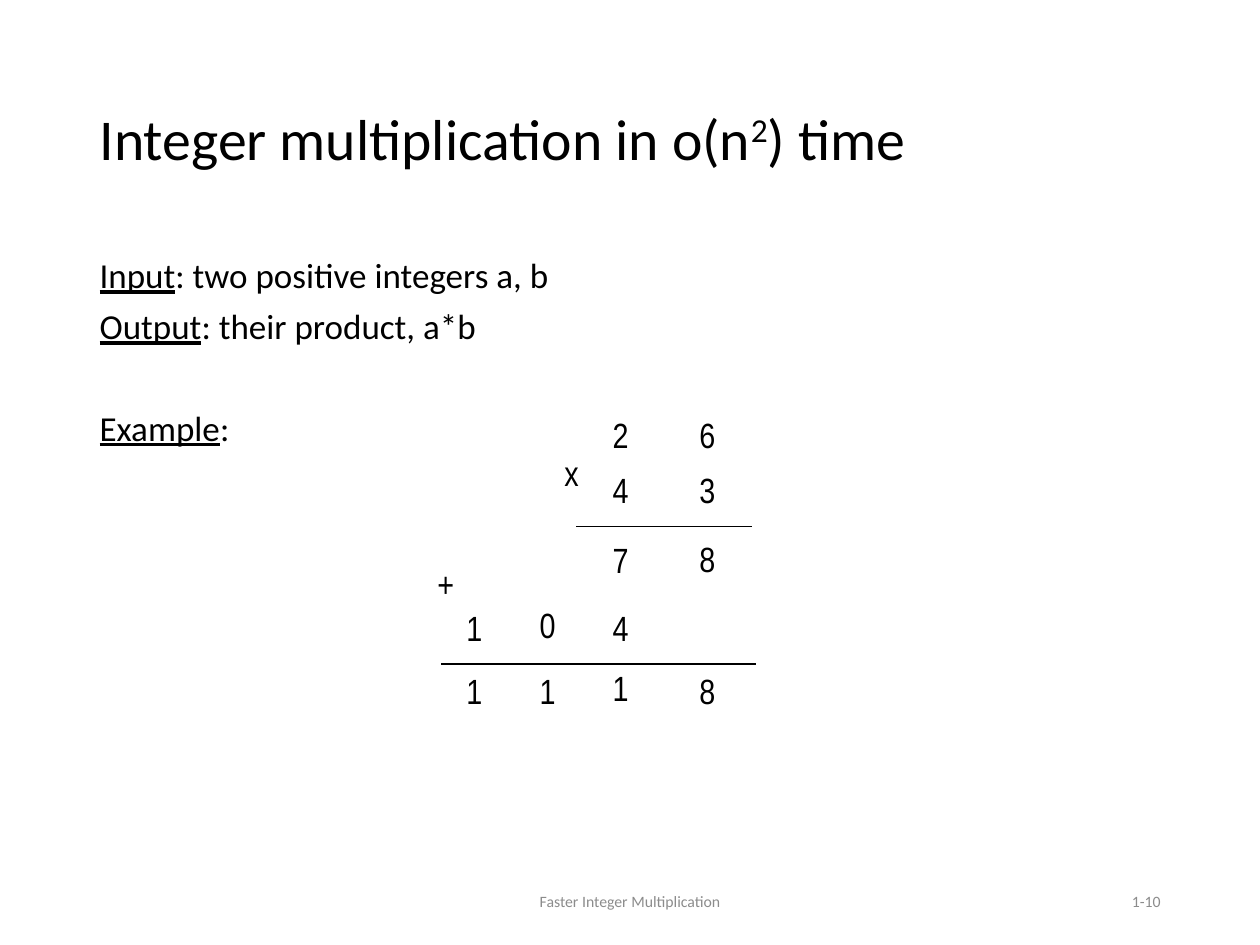
"""Build a slide that multiplies 26 by 43 in long form."""
from lxml import etree
from pptx import Presentation
from pptx.dml.color import RGBColor
from pptx.enum.shapes import MSO_CONNECTOR
from pptx.enum.text import MSO_ANCHOR, MSO_AUTO_SIZE, PP_ALIGN
from pptx.oxml.ns import qn
from pptx.util import Pt

LEFT, CENTER, RIGHT = PP_ALIGN.LEFT, PP_ALIGN.CENTER, PP_ALIGN.RIGHT
MIDDLE, NO_FIT = MSO_ANCHOR.MIDDLE, MSO_AUTO_SIZE.NONE
STRAIGHT = MSO_CONNECTOR.STRAIGHT
BLACK = RGBColor(0x00, 0x00, 0x00)
GRAY = RGBColor(0x8C, 0x8C, 0x8C)
BODY_FONT, DIGIT_FONT = "Calibri", "Arial Narrow"
PX = 914400 / 126

TITLE = [("Integer multiplication in o(n", False), ("2", True), (") time", False)]
BODY = [("Input", ": two positive integers a, b", 7.5),
        ("Output", ": their product, a*b", 7.5),
        ("Example", ":", 36.5)]
FOOTERS = [("Faster Integer Multiplication", (417, 876, 426, 50), CENTER),
           ("1-10", (890, 876, 283, 50), RIGHT)]
SIGNS = [("x", (552, 445, 53, 55)), ("+", (425, 556, 53, 55))]
COLUMNS = [431, 504, 577, 664]
CELL_W, CELL_H = 87, 51
FACTORS = ["26", "43"]
FACTORS_TOP = 417
DIGITS = [("8", 3, 541), ("7", 2, 542),
          ("4", 2, 610), ("0", 1, 607), ("1", 0, 610),
          ("8", 3, 673), ("1", 2, 670), ("1", 1, 673), ("1", 0, 673)]
SUM_LINE = (441, 664, 756, 664)


def emu(*lengths):
    return [round(n * PX) for n in lengths]


def style(p, size, name=BODY_FONT, color=BLACK, align=LEFT):
    p.alignment = align
    p.font.size = Pt(size)
    p.font.name = name
    p.font.color.rgb = color


def place(s, box):
    s.left, s.top, s.width, s.height = emu(*box)
    s.text_frame.auto_size = NO_FIT
    return s.text_frame


def add_text(slide, text, box, **look):
    tf = slide.shapes.add_textbox(*emu(*box)).text_frame
    tf.word_wrap = True
    tf.text = text
    style(tf.paragraphs[0], **look)
    return tf


def add_digits(slide, rows, left, top):
    size = (len(rows[0]) * CELL_W, len(rows) * CELL_H)
    table = slide.shapes.add_table(len(rows), len(rows[0]),
                                   *emu(left, top, *size)).table
    table.first_row = table.horz_banding = False
    for i, row in enumerate(rows):
        for j, digit in enumerate(row):
            cell = table.cell(i, j)
            cell.text = digit
            style(cell.text_frame.paragraphs[0], 20, DIGIT_FONT, align=CENTER)
            cell.fill.background()
    return table


def underline_cell(cell):
    tc_pr = cell._tc.get_or_add_tcPr()
    ln = etree.Element(qn("a:lnB"), w=str(Pt(1)))
    fill = etree.SubElement(ln, qn("a:solidFill"))
    etree.SubElement(fill, qn("a:srgbClr"), val=str(BLACK))
    tc_pr.insert(0, ln)


def add_title(slide):
    tf = place(slide.shapes.title, (87, 50, 1086, 183))
    tf.vertical_anchor = MIDDLE
    p = tf.paragraphs[0]
    style(p, 33)
    p.line_spacing = 0.9
    for text, raised in TITLE:
        r = p.add_run()
        r.text = text
        if raised:
            r.font._element.set("baseline", "30000")


def add_body(slide):
    tf = place(slide.placeholders[1], (87, 252, 1086, 600))
    for i, (label, rest, before) in enumerate(BODY):
        p = tf.add_paragraph() if i else tf.paragraphs[0]
        p_pr = p._p.get_or_add_pPr()
        p_pr.set("marL", "0")
        p_pr.set("indent", "0")
        etree.SubElement(p_pr, qn("a:buNone"))
        style(p, 20)
        p.line_spacing = 0.9
        p.space_before = Pt(before)
        for text, underlined in ((label, True), (rest, False)):
            r = p.add_run()
            r.text = text
            r.font.underline = underlined


def main():
    prs = Presentation()
    prs.slide_width, prs.slide_height = emu(1260, 945)
    slide = prs.slides.add_slide(prs.slide_layouts[1])
    add_title(slide)
    add_body(slide)
    for text, box, align in FOOTERS:
        tf = add_text(slide, text, box, size=9, color=GRAY, align=align)
        tf.vertical_anchor = MIDDLE

    factors = add_digits(slide, FACTORS, COLUMNS[2], FACTORS_TOP)
    for j in range(len(FACTORS[-1])):
        underline_cell(factors.cell(len(FACTORS) - 1, j))
    for digit, column, top in DIGITS:
        add_digits(slide, [digit], COLUMNS[column], top)
    for sign, box in SIGNS:
        add_text(slide, sign, box, size=20, name=DIGIT_FONT)

    line = slide.shapes.add_connector(STRAIGHT, *emu(*SUM_LINE))
    line.line.color.rgb = BLACK
    line.line.width = Pt(1.5)
    etree.SubElement(line._element.spPr, qn("a:effectLst"))
    prs.save("out.pptx")


if __name__ == "__main__":
    main()
